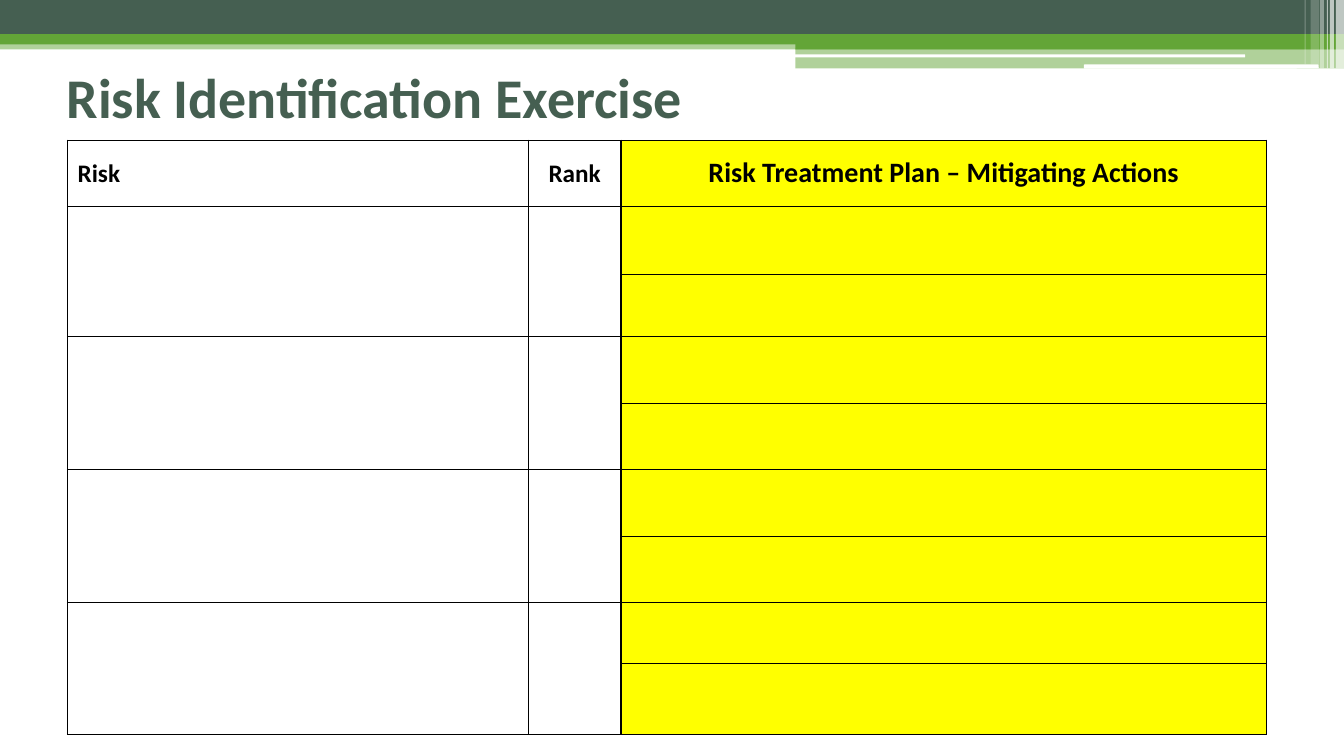
import pptx
import pptx.dml.color
import pptx.enum.shapes
import pptx.enum.text
import pptx.oxml
import pptx.oxml.ns
import pptx.util

Inches = pptx.util.Inches
Align = pptx.enum.text.PP_ALIGN
Anchor = pptx.enum.text.MSO_ANCHOR
Preset = pptx.enum.shapes.MSO_SHAPE

COLORS = {"dark": "455F51", "green": "63A537", "white": "FFFFFF",
          "black": "000000", "yellow": "FFFF00"}


class SlideBuilder:
    """Holds the style and the current slide."""

    font = "Calibri"

    def __init__(self, presentation):
        self.slide = presentation.slides.add_slide(presentation.slide_layouts[5])

    def color(self, name):
        return pptx.dml.color.RGBColor.from_string(COLORS[name])

    def add_text(self, text_frame, text, size, color, align=Align.LEFT):
        paragraph = text_frame.paragraphs[0]
        paragraph.alignment = align
        run = paragraph.add_run()
        run.text = text
        run.font.name = self.font
        run.font.size = pptx.util.Pt(size)
        run.font.bold = True
        run.font.color.rgb = self.color(color)

    def title(self, text, left, top, width, height):
        shape = self.slide.shapes.title
        shape.left, shape.top = Inches(left), Inches(top)
        shape.width, shape.height = Inches(width), Inches(height)
        shape.text_frame.vertical_anchor = Anchor.MIDDLE
        self.add_text(shape.text_frame, text, 40, "dark")

    def band(self, left, top, width, height, color, opacity=100, preset=Preset.RECTANGLE):
        shape = self.slide.shapes.add_shape(
            preset, Inches(left), Inches(top), Inches(width), Inches(height))
        shape.shadow.inherit = False
        shape.line.fill.background()
        shape.fill.solid()
        shape.fill.fore_color.rgb = self.color(color)
        if opacity < 100:
            fill_color = shape._element.spPr.find(".//" + pptx.oxml.ns.qn("a:srgbClr"))
            fill_color.append(pptx.oxml.parse_xml(
                f'<a:alpha {pptx.oxml.ns.nsdecls("a")} val="{opacity * 1000}"/>'))

    def border(self, cell):
        properties = cell._tc.get_or_add_tcPr()
        for side in ("lnL", "lnR", "lnT", "lnB"):
            properties.append(pptx.oxml.parse_xml(
                f'<a:{side} {pptx.oxml.ns.nsdecls("a")} w="12700"><a:solidFill>'
                f'<a:srgbClr val="{COLORS["black"]}"/></a:solidFill></a:{side}>'))

    def table(self, left, top, columns, rows, headers):
        table = self.slide.shapes.add_table(
            len(rows), len(columns), Inches(left), Inches(top),
            Inches(sum(columns)), Inches(sum(rows))).table
        table.first_row = table.horz_banding = False
        for column, width in zip(table.columns, columns):
            column.width = Inches(width)
        for row, height in zip(table.rows, rows):
            row.height = Inches(height)
            for index, cell in enumerate(row.cells):
                self.border(cell)
                if index == len(columns) - 1:
                    cell.fill.solid()
                    cell.fill.fore_color.rgb = self.color("yellow")
                else:
                    cell.fill.background()
        for index, (text, size, align) in enumerate(headers):
            cell = table.cell(0, index)
            cell.vertical_anchor = Anchor.MIDDLE
            self.add_text(cell.text_frame, text, size, "black", align)
        # Each risk and its rank span two mitigating actions
        for row in range(1, len(rows), 2):
            for column in range(len(columns) - 1):
                table.cell(row, column).merge(table.cell(row + 1, column))


def main():
    presentation = pptx.Presentation()
    presentation.slide_width = Inches(13.33)
    presentation.slide_height = Inches(7.5)
    builder = SlideBuilder(presentation)

    # Header bands
    builder.band(0, 0.4, 13.33, 0.09, "green", 50)
    builder.band(0, 0, 13.33, 0.34, "dark")
    builder.band(0, 0.34, 13.33, 0.1, "green")
    builder.band(7.89, 0.39, 5.44, 0.1, "green")
    builder.band(7.89, 0.48, 5.44, 0.2, "green", 50)
    builder.band(7.88, 0.54, 4.47, 0.03, "white", preset=Preset.ROUNDED_RECTANGLE)
    builder.band(10.75, 0.64, 2.33, 0.04, "white", preset=Preset.ROUNDED_RECTANGLE)

    # Translucent stripes at the right edge
    for left, width, height, opacity in (
            (13.25, 0.08, 0.68, 65), (13.19, 0.04, 0.68, 65), (13.16, 0.01, 0.68, 60),
            (13.09, 0.04, 0.68, 40), (13, 0.08, 0.64, 20), (12.94, 0.01, 0.64, 30)):
        builder.band(left, 0, width, height, "white", opacity)

    # Title
    builder.title("Risk Identification Exercise", 0.56, 0.37, 12, 1.17)

    # Risk table
    builder.table(
        0.67, 1.39, (4.57, 0.92, 6.4),
        (0.66, 0.67, 0.62, 0.66, 0.66, 0.66, 0.66, 0.6, 0.71),
        (("Risk", 18, Align.LEFT), ("Rank", 18, Align.CENTER),
         ("Risk Treatment Plan – Mitigating Actions", 20, Align.CENTER)))

    presentation.save("out.pptx")


if __name__ == "__main__":
    main()
